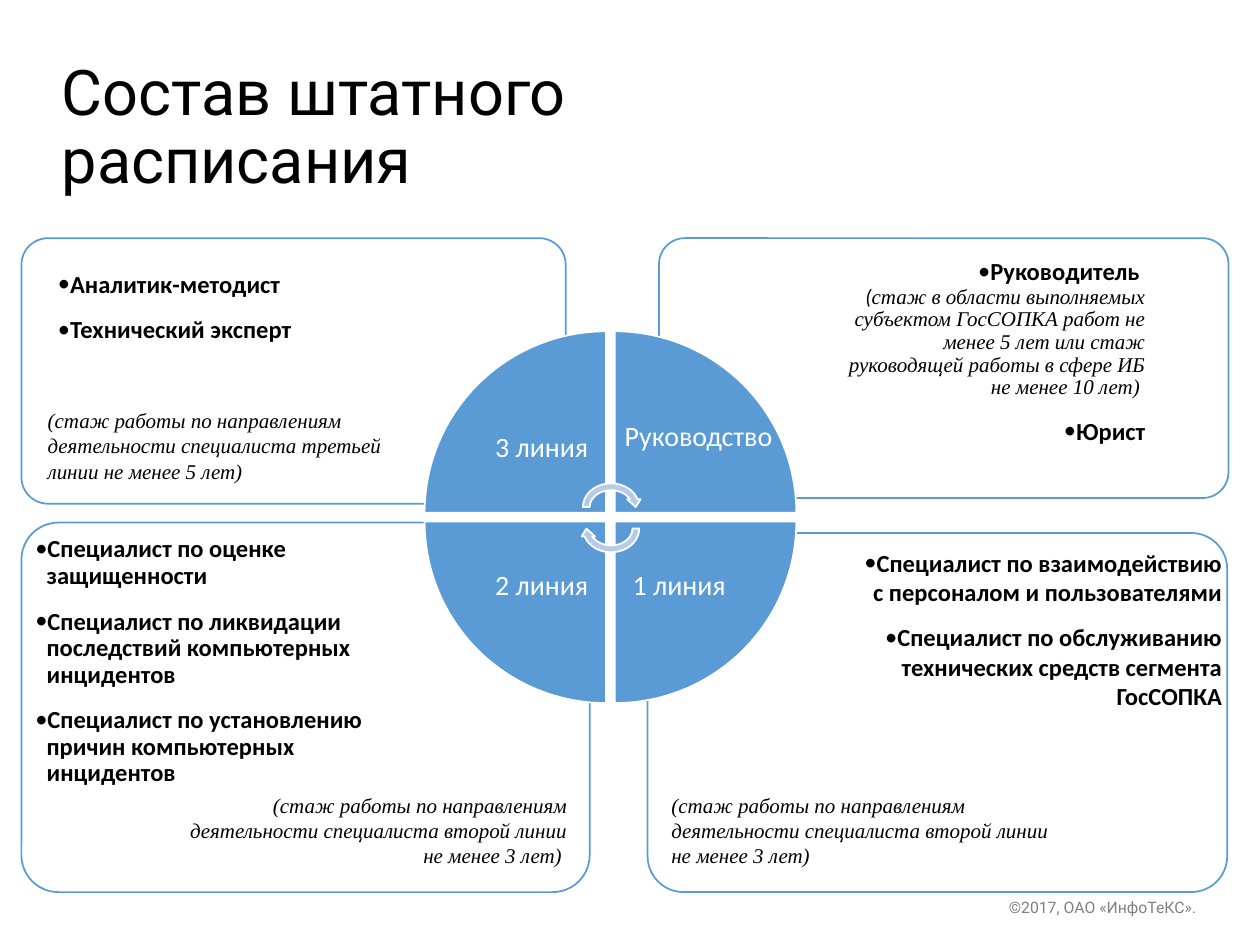
from copy import deepcopy
from typing import NamedTuple

from lxml.etree import SubElement
from pptx import Presentation
from pptx.dml.color import RGBColor
from pptx.enum.shapes import MSO_SHAPE as Preset
from pptx.enum.text import MSO_ANCHOR as Anchor, MSO_AUTO_SIZE as AutoSize, PP_ALIGN as Align
from pptx.oxml.ns import qn
from pptx.util import Inches, Pt

BLUE = RGBColor(0x5B, 0x9B, 0xD5)
PALE_BLUE = RGBColor(0xB5, 0xCB, 0xE7)
GRAY = RGBColor(0x80, 0x80, 0x80)
BLACK = RGBColor(0, 0, 0)
WHITE = RGBColor(255, 255, 255)
SLIDE_WIDTH, SLIDE_HEIGHT = Inches(10), Inches(7.5)


class Box(NamedTuple):
    """A place in percent of the slide's width and height."""
    left: float
    top: float
    width: float
    height: float

    def lengths(self) -> tuple:
        """Give left, top, width and height as lengths."""
        sides = (SLIDE_WIDTH, SLIDE_HEIGHT) * 2
        return tuple(int(share * side / 100) for share, side in zip(self, sides))


class Style(NamedTuple):
    """The look of a run of text."""
    font: str
    size: float
    color: RGBColor = BLACK
    bold: bool = False
    italic: bool = False


class Staff(NamedTuple):
    """A bulleted list of positions."""
    box: Box
    items: tuple
    align: Align = Align.LEFT
    spacing: float = 0.9
    after: float = 2.1
    inset: float = 0.05
    side_inset: float = 0.05


class Note(NamedTuple):
    """A stand-alone piece of text."""
    box: Box
    text: str
    style: Style
    align: Align = Align.LEFT
    wrap: bool = True


class Quadrant(NamedTuple):
    """A quarter of the circle, placed by column and row."""
    column: int
    row: int
    rotation: int
    label: str = ""


POSITION = Style("Calibri", 14, bold=True)
PARENTHESIS = Style("Calibri", 12, italic=True)
EXPERIENCE = Style("Times New Roman", 12, italic=True)
LABEL = Style("Calibri", 16, WHITE)
TITLE = Style("Roboto", 36)
FOOTER = Style("Roboto", 9, GRAY)

TITLE_BOX = Box(4.9, 10.9, 50.8, 5.6)
PANELS = (
    Box(52.3, 25.2, 45.2, 27.5),
    Box(1.7, 25.2, 43.2, 28.1),
    Box(1.7, 55.3, 45.1, 39.1),
    Box(51.4, 56.4, 46, 38),
)
STAFF = (
    Staff(Box(3.6, 28.1, 21.7, 14.1),
          ((("Аналитик-методист", POSITION),), (("Технический эксперт", POSITION),)),
          side_inset=0.1),
    Staff(Box(2.3, 56.1, 30.3, 27.6),
          ((("Специалист по оценке защищенности", POSITION),),
           (("Специалист по ликвидации последствий компьютерных инцидентов", POSITION),),
           (("Специалист по установлению причин компьютерных инцидентов", POSITION),))),
    Staff(Box(64.4, 26.8, 27.5, 26.1),
          ((("Руководитель ", POSITION), ("\v", POSITION), ("(", PARENTHESIS),
            ("стаж в области выполняемых субъектом ГосСОПКА работ не менее 5 лет "
             "или стаж руководящей работы в сфере ИБ не менее 10 лет) ", EXPERIENCE)),
           (("Юрист", POSITION),)),
          Align.RIGHT, side_inset=0.1),
    Staff(Box(67, 57.3, 30.5, 33.7),
          ((("Специалист по взаимодействию с персоналом и пользователями", POSITION),),
           (("Специалист по обслуживанию технических средств сегмента ГосСОПКА", POSITION),)),
          Align.RIGHT, spacing=1, after=0),
)
SECOND_LINE = ("(стаж работы по направлениям деятельности специалиста "
               "второй линии не менее 3 лет)")
NOTES = (
    Note(Box(2.8, 42.5, 29, 9.5), "(стаж работы по направлениям деятельности специалиста "
         "третьей линии не менее 5 лет)", EXPERIENCE),
    Note(Box(52.3, 83.2, 32, 9.5), SECOND_LINE, EXPERIENCE),
    Note(Box(14, 83.2, 32, 9.5), SECOND_LINE + " ", EXPERIENCE, Align.RIGHT),
    Note(Box(48.6, 43.6, 13.9, 4.9), "Руководство", LABEL, wrap=False),
    Note(Box(74.2, 94.4, 21.7, 2.9), "©2017, ОАО «ИнфоТеКС».", FOOTER, Align.RIGHT),
)
QUADRANTS = (
    Quadrant(0, 0, 0, "3 линия"),
    Quadrant(1, 0, 90),
    Quadrant(1, 1, 180, "1 линия"),
    Quadrant(0, 1, 270, "2 линия"),
)
CENTER_X, CENTER_Y = 48.45, 54.73
WEDGE_WIDTH, WEDGE_HEIGHT = 14.4, 19.2
GAP_X, GAP_Y = 0.35, 0.47
LABEL_SHARE = 0.71
ARROWS = ((Box(46, 50.8, 5, 5.73), 0), (Box(46, 53.07, 5, 5.73), 180))


def place(shape, box: Box) -> None:
    """Move and size a shape."""
    shape.left, shape.top, shape.width, shape.height = box.lengths()


def format_run(run, style: Style) -> None:
    """Apply a style to a run."""
    font = run.font
    font.name, font.size = style.font, Pt(style.size)
    font.bold, font.italic = style.bold, style.italic
    font.color.rgb = style.color


def set_frame(frame, side: float, inset: float, anchor: Anchor) -> None:
    """Set insets, wrapping and anchor of a text frame."""
    frame.auto_size = AutoSize.NONE
    frame.word_wrap = True
    frame.margin_left = frame.margin_right = Inches(side)
    frame.margin_top = frame.margin_bottom = Inches(inset)
    frame.vertical_anchor = anchor


def add_preset(slide, preset: Preset, box: Box, fill: RGBColor, line: RGBColor, rotation=0):
    """Draw a filled and outlined preset shape."""
    shape = slide.shapes.add_shape(preset, *box.lengths())
    shape.shadow.inherit = False
    shape.fill.solid()
    shape.fill.fore_color.rgb = fill
    shape.line.color.rgb = line
    shape.line.width = Pt(1)
    shape.rotation = rotation
    return shape


def add_panel(slide, box: Box) -> None:
    """Draw a rounded, nearly opaque panel."""
    panel = add_preset(slide, Preset.ROUNDED_RECTANGLE, box, WHITE, BLUE)
    panel.adjustments[0] = 0.1
    color = panel.element.spPr.find(qn("a:solidFill"))[0]
    SubElement(color, qn("a:alpha"), val="90000")


def add_note(slide, note: Note):
    """Write a text box and return it."""
    shape = slide.shapes.add_textbox(*note.box.lengths())
    shape.text_frame.text = note.text
    shape.text_frame.word_wrap = note.wrap
    paragraph = shape.text_frame.paragraphs[0]
    paragraph.alignment = note.align
    format_run(paragraph.runs[0], note.style)
    return shape


def add_quadrant(slide, quadrant: Quadrant) -> None:
    """Draw a quarter of the circle with its label."""
    left = CENTER_X + (GAP_X if quadrant.column else -GAP_X - WEDGE_WIDTH)
    top = CENTER_Y + (GAP_Y if quadrant.row else -GAP_Y - WEDGE_HEIGHT)
    box = Box(left, top, WEDGE_WIDTH, WEDGE_HEIGHT)
    add_preset(slide, Preset.PIE_WEDGE, box, BLUE, WHITE, quadrant.rotation)
    if quadrant.label:
        width, height = WEDGE_WIDTH * LABEL_SHARE, WEDGE_HEIGHT * LABEL_SHARE
        inner = Box(left + (0 if quadrant.column else WEDGE_WIDTH - width),
                    top + (0 if quadrant.row else WEDGE_HEIGHT - height), width, height)
        label = add_note(slide, Note(inner, quadrant.label, LABEL, Align.CENTER))
        set_frame(label.text_frame, 0.12, 0.12, Anchor.MIDDLE)
        label.text_frame.paragraphs[0].line_spacing = 0.9


def fill_staff(shape, staff: Staff) -> None:
    """Fill a body placeholder with a bulleted list and bring it forward."""
    place(shape, staff.box)
    shape.element.getparent().append(shape.element)
    frame = shape.text_frame
    set_frame(frame, staff.side_inset, staff.inset, Anchor.TOP)
    frame.text = "\n".join("".join(text for text, _ in item[:1]) for item in staff.items)
    for index, (paragraph, item) in enumerate(zip(frame.paragraphs, staff.items)):
        properties = paragraph._p.get_or_add_pPr()
        properties.set("marL", str(Inches(0.09)))
        properties.set("indent", str(-Inches(0.09)))
        SubElement(properties, qn("a:buFont"), typeface="Calibri")
        SubElement(properties, qn("a:buChar"), char="•")
        paragraph.alignment = staff.align
        paragraph.line_spacing = staff.spacing
        paragraph.space_before = Pt(9 if index else 0)
        paragraph.space_after = Pt(staff.after)
        format_run(paragraph.runs[0], item[0][1])
        for text, style in item[1:]:
            if text == "\v":
                paragraph.add_line_break()
                paragraph._p[-1].append(deepcopy(paragraph.runs[-1].font._element))
            else:
                run = paragraph.add_run()
                run.text = text
                format_run(run, style)


def main() -> None:
    """Build the slide and save it."""
    presentation = Presentation()
    presentation.slide_width, presentation.slide_height = SLIDE_WIDTH, SLIDE_HEIGHT
    slide = presentation.slides.add_slide(presentation.slide_layouts.get_by_name("Comparison"))
    title, *bodies = slide.placeholders
    for panel in PANELS:
        add_panel(slide, panel)
    place(title, TITLE_BOX)
    title.text_frame.text = "Состав штатного расписания"
    set_frame(title.text_frame, 0, 0, Anchor.MIDDLE)
    heading = title.text_frame.paragraphs[0]
    heading.alignment, heading.line_spacing = Align.LEFT, 0.9
    format_run(heading.runs[0], TITLE)
    for quadrant in QUADRANTS:
        add_quadrant(slide, quadrant)
    for box, rotation in ARROWS:
        add_preset(slide, Preset.CIRCULAR_ARROW, box, PALE_BLUE, WHITE, rotation)
    for body, staff in zip(bodies, STAFF):
        fill_staff(body, staff)
    for note in NOTES:
        add_note(slide, note)
    presentation.save("out.pptx")


if __name__ == "__main__":
    main()
